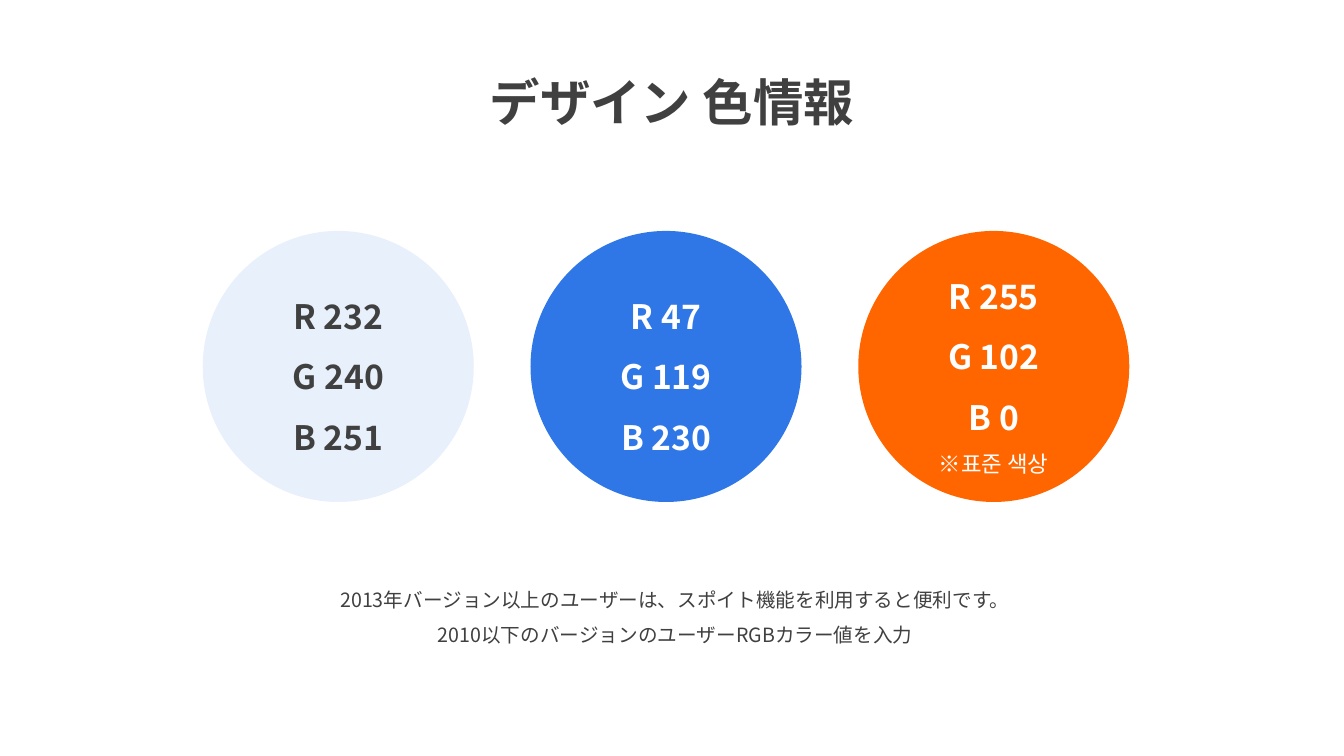
import pptx
import pptx.dml.color
import pptx.enum.shapes
import pptx.enum.text
import pptx.oxml
import pptx.oxml.ns
import pptx.util
from dataclasses import dataclass

Cm = pptx.util.Cm


@dataclass(frozen=True)
class Theme:
    font: str = "Noto Sans CJK KR"
    dark: str = "404040"
    white: str = "FFFFFF"
    pale: str = "E8F0FB"
    blue: str = "2F77E6"
    orange: str = "FF6600"
    title: int = 36
    value: int = 24
    note: int = 16
    body: int = 14
    spacing: float = 1.5


class Deck:
    def __init__(self, prs, theme):
        self.theme = theme
        self.s = prs.slides.add_slide(prs.slide_layouts[5])

    def add_lines(self, tf, lines, color):
        """Each line is (text, size, bold)."""
        tf.word_wrap = True
        tf.vertical_anchor = pptx.enum.text.MSO_ANCHOR.MIDDLE
        for i, (text, size, bold) in enumerate(lines):
            p = tf.add_paragraph() if i else tf.paragraphs[0]
            p.alignment = pptx.enum.text.PP_ALIGN.CENTER
            p.line_spacing = self.theme.spacing
            r = p.add_run()
            r.text = text
            r.font.size = pptx.util.Pt(size)
            r.font.bold = bold
            r.font.name = self.theme.font
            r.font.color.rgb = pptx.dml.color.RGBColor.from_string(color)
            # East Asian glyphs use the same font
            ea = pptx.oxml.parse_xml(
                f'<a:ea {pptx.oxml.ns.nsdecls("a")} typeface="{self.theme.font}"/>')
            r.font._element.find(pptx.oxml.ns.qn("a:latin")).addnext(ea)

    def fit(self, sp, box, lines):
        sp.left, sp.top, sp.width, sp.height = (Cm(v) for v in box)
        self.add_lines(sp.text_frame, lines, self.theme.dark)
        sp.text_frame.auto_size = pptx.enum.text.MSO_AUTO_SIZE.SHAPE_TO_FIT_TEXT

    def title(self, text, box):
        self.fit(self.s.shapes.title, box, [(text, self.theme.title, True)])

    def text(self, lines, box):
        sp = self.s.shapes.add_textbox(*(Cm(v) for v in box))
        self.fit(sp, box, [(t, self.theme.body, False) for t in lines])

    def circle(self, left, top, size, fill, color, lines):
        sp = self.s.shapes.add_shape(
            pptx.enum.shapes.MSO_SHAPE.OVAL, Cm(left), Cm(top), Cm(size), Cm(size))
        sp.shadow.inherit = False
        sp.fill.solid()
        sp.fill.fore_color.rgb = pptx.dml.color.RGBColor.from_string(fill)
        sp.line.fill.background()
        self.add_lines(sp.text_frame, lines, color)


def main():
    prs = pptx.Presentation()
    prs.slide_width, prs.slide_height = Cm(33.87), Cm(19.05)
    theme = Theme()
    deck = Deck(prs, theme)

    # Title
    deck.title("デザイン 色情報", (10.77, 1.02, 12.32, 2.31))

    # Colour circles, evenly spaced
    swatches = [
        (theme.pale, theme.dark, None),
        (theme.blue, theme.white, None),
        (theme.orange, theme.white, "※표준 색상"),
    ]
    left, step = 5.11, 8.26
    for i, (fill, color, note) in enumerate(swatches):
        rgb = pptx.dml.color.RGBColor.from_string(fill)
        lines = [(f"{name} {value}", theme.value, True)
                 for name, value in zip("RGB", rgb)]
        if note:
            lines.append((note, theme.note, False))
        deck.circle(left + i * step, 5.82, 6.83, fill, color, lines)

    # Usage notes
    deck.text(["2013年バージョン以上のユーザーは、スポイト機能を利用すると便利です。",
               "2010以下のバージョンのユーザーRGBカラー値を入力"],
              (6.4, 14.43, 21.23, 1.96))

    prs.save("out.pptx")


if __name__ == "__main__":
    main()
